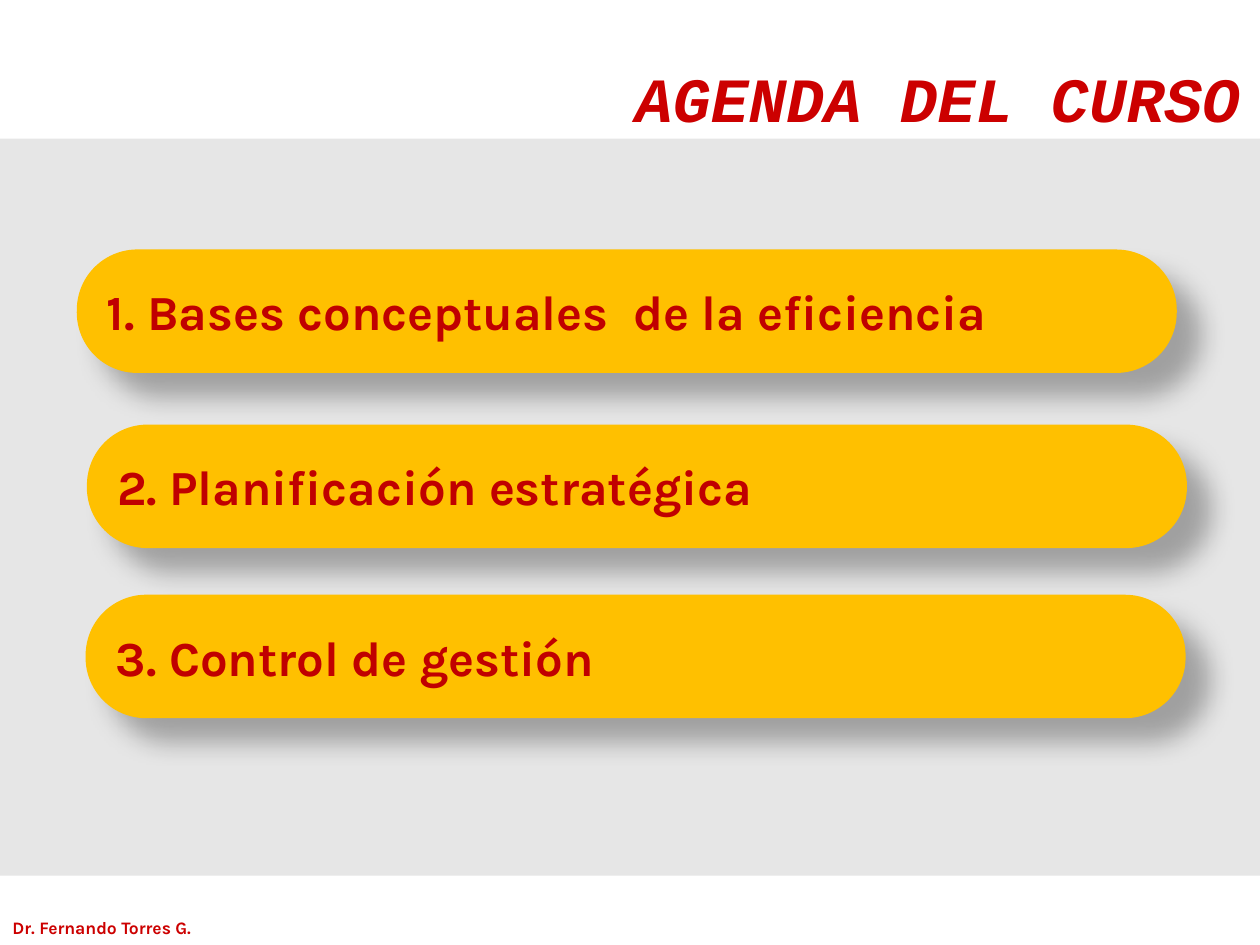
"""Build the course agenda slide with three rounded topic bars."""
from lxml import etree
from pptx import Presentation, util as u
from pptx.dml.color import RGBColor
from pptx.enum import shapes, text
from pptx.oxml import ns

RED = RGBColor(0xCC, 0x00, 0x00)
DARK_RED = RGBColor(0xC0, 0x00, 0x00)
AMBER = RGBColor(0xFF, 0xC0, 0x00)
GREY = RGBColor(0xE6, 0xE6, 0xE6)


def write(s, words, font, size, color, italic=None):
    p = s.text_frame.paragraphs[0]
    p.alignment = text.PP_ALIGN.LEFT
    r = p.add_run()
    r.text = words
    r.font.name, r.font.size, r.font.bold = font, u.Pt(size), True
    r.font.italic = italic
    r.font.color.rgb = color
    return p, r


def add_shadow(effects, color, alpha, blur, dist):
    shadow = etree.SubElement(effects, ns.qn("a:outerShdw"), blurRad=str(u.Pt(blur)),
                              dist=str(u.Pt(dist)), dir="2700000", algn="tl", rotWithShape="0")
    clr = etree.SubElement(shadow, ns.qn("a:srgbClr"), val=str(color))
    etree.SubElement(clr, ns.qn("a:alpha"), val=str(alpha * 1000))


prs = Presentation()
prs.slide_width, prs.slide_height = u.Inches(10), u.Inches(7.5)
slide = prs.slides.add_slide(prs.slide_layouts[6])

s = slide.shapes.add_shape(shapes.MSO_SHAPE.RECTANGLE, 0, u.Inches(1.1),
                           prs.slide_width, u.Inches(5.85))
s.shadow.inherit = False
s.fill.solid()
s.fill.fore_color.rgb = GREY
s.line.fill.background()

s = slide.shapes.add_textbox(0, u.Inches(7.23), u.Inches(1.8), u.Inches(0.27))
s.text_frame.word_wrap = False
write(s, "Dr. Fernando Torres G.", "Karla", 10, RED)

s = slide.shapes.add_textbox(u.Inches(0.94), u.Inches(0.42), u.Inches(9), u.Inches(0.7))
s.text_frame.word_wrap = True
p, r = write(s, "AGENDA DEL CURSO", "Courier New", 36, RED, True)
p.alignment = text.PP_ALIGN.RIGHT
effects = etree.Element(ns.qn("a:effectLst"))
r.font.fill._xPr.find(ns.qn("a:solidFill")).addnext(effects)
add_shadow(effects, RGBColor(0x80, 0x80, 0x80), 100, 0, 3)

topics = [
    (0.61, 1.98, "1. Bases conceptuales  de la eficiencia"),
    (0.69, 3.37, "2. Planificación estratégica"),
    (0.68, 4.72, "3. Control de gestión"),
]
for left, top, words in topics:
    s = slide.shapes.add_shape(shapes.MSO_SHAPE.ROUNDED_RECTANGLE, u.Inches(left),
                               u.Inches(top), u.Inches(8.73), u.Inches(0.98))
    s.adjustments[0] = 0.49
    s.fill.solid()
    s.fill.fore_color.rgb = AMBER
    s.line.fill.background()
    s.shadow.inherit = False
    add_shadow(s._element.spPr.find(ns.qn("a:effectLst")), RGBColor(0, 0, 0), 30, 15, 18)
    tf = s.text_frame
    tf.word_wrap = True
    tf.vertical_anchor = text.MSO_ANCHOR.MIDDLE
    write(s, words, "Karla", 28, DARK_RED)

prs.save("out.pptx")
